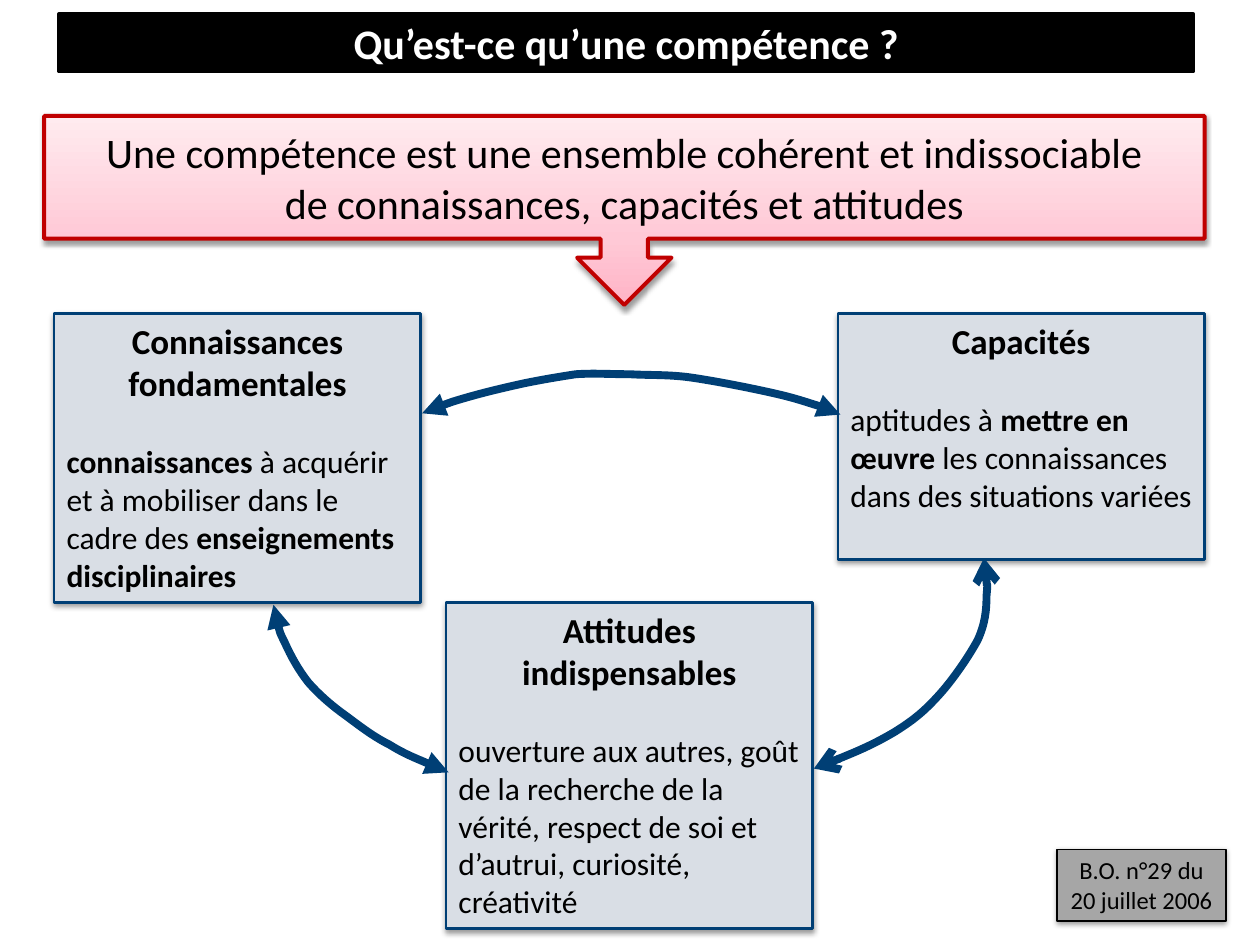
from dataclasses import dataclass

import lxml.etree
import pptx
import pptx.dml.color
import pptx.enum.shapes
import pptx.enum.text
import pptx.oxml.ns
import pptx.util

Inches = pptx.util.Inches
Pt = pptx.util.Pt
RGBColor = pptx.dml.color.RGBColor
Shapes = pptx.enum.shapes.MSO_SHAPE
Align = pptx.enum.text.PP_ALIGN
Anchor = pptx.enum.text.MSO_ANCHOR
qn = pptx.oxml.ns.qn

BLACK = RGBColor(0x00, 0x00, 0x00)
WHITE = RGBColor(0xFF, 0xFF, 0xFF)
NAVY = RGBColor(0x00, 0x3F, 0x75)
PALE_BLUE = RGBColor(0xD9, 0xDE, 0xE5)
RED = RGBColor(0xC0, 0x00, 0x00)
GREY = RGBColor(0xA6, 0xA6, 0xA6)
PINKS = ((0, "FFB3C6"), (35, "FFC9D6"), (100, "FFEBEF"))
FONT = "Calibri"
CARD_WIDTH = 2.91

Point = tuple[float, float]


@dataclass
class Span:
    text: str
    bold: bool = False


@dataclass
class Card:
    left: float
    top: float
    height: float
    heading: str
    body: list[Span]


@dataclass
class Arrow:
    """A chain of cubic curves: a start point, then three points per curve."""
    head: str
    points: list[Point]


CARDS = [
    Card(0.43, 2.49, 2.29, "Connaissances fondamentales", [
        Span("connaissances", True),
        Span(" à acquérir et à mobiliser dans le cadre des "),
        Span("enseignements disciplinaires", True)]),
    Card(6.65, 2.49, 1.95, "Capacités", [
        Span("aptitudes à "),
        Span("mettre en œuvre", True),
        Span(" les connaissances dans des situations variées")]),
    Card(3.54, 4.78, 2.59, "Attitudes indispensables", [
        Span("ouverture aux autres, goût de la recherche de la vérité, "
             "respect de soi et d’autrui, curiosité, créativité")]),
]

ARROWS = [
    Arrow("arrow", [
        (7.81, 4.43), (7.83, 4.52), (7.84, 4.62), (7.83, 4.73),
        (7.83, 4.84), (7.82, 4.95), (7.76, 5.08),
        (7.69, 5.21), (7.56, 5.4), (7.45, 5.52),
        (7.34, 5.64), (7.26, 5.71), (7.1, 5.81),
        (6.93, 5.91), (6.7, 6.01), (6.46, 6.1)]),
    Arrow("triangle", [
        (3.35, 3.28), (3.47, 3.23), (3.58, 3.19), (3.72, 3.15),
        (3.86, 3.11), (4.03, 3.07), (4.17, 3.04),
        (4.32, 3.01), (4.44, 2.99), (4.57, 2.97),
        (4.71, 2.96), (4.84, 2.97), (5, 2.97),
        (5.16, 2.98), (5.32, 2.97), (5.51, 3),
        (5.71, 3.03), (6.01, 3.09), (6.18, 3.13),
        (6.35, 3.17), (6.45, 3.21), (6.53, 3.23),
        (6.61, 3.26), (6.64, 3.27), (6.67, 3.29)]),
    Arrow("triangle", [
        (2.17, 4.8), (2.19, 4.9), (2.21, 5), (2.26, 5.1),
        (2.31, 5.21), (2.37, 5.32), (2.45, 5.42),
        (2.53, 5.51), (2.62, 5.59), (2.73, 5.67),
        (2.84, 5.75), (2.95, 5.84), (3.09, 5.91),
        (3.22, 5.99), (3.56, 6.13), (3.56, 6.13)]),
]


def add_box(page, kind, left: float, top: float, width: float, height: float,
            fill: RGBColor, line: RGBColor, weight: float, anchor=Anchor.TOP):
    box = page.shapes.add_shape(
        kind, Inches(left), Inches(top), Inches(width), Inches(height))
    box.fill.solid()
    box.fill.fore_color.rgb = fill
    box.line.color.rgb = line
    box.line.width = Pt(weight)
    box.shadow.inherit = False
    box.text_frame.word_wrap = True
    box.text_frame.vertical_anchor = anchor
    return box


def add_shadow(box) -> None:
    effects = box._element.spPr.find(qn("a:effectLst"))
    shadow = lxml.etree.SubElement(
        effects, qn("a:outerShdw"), blurRad=str(Pt(3.1)), dist=str(Pt(1.6)),
        dir="5400000", rotWithShape="0")
    color = lxml.etree.SubElement(shadow, qn("a:srgbClr"), val=str(BLACK))
    lxml.etree.SubElement(color, qn("a:alpha"), val="38000")


def fill_with_pinks(box) -> None:
    box.fill.gradient()
    box.fill.gradient_angle = 90
    stops = box._element.spPr.find(qn("a:gradFill")).find(qn("a:gsLst"))
    for stop in list(stops):
        stops.remove(stop)
    for percent, color in PINKS:
        stop = lxml.etree.SubElement(stops, qn("a:gs"), pos=str(percent * 1000))
        lxml.etree.SubElement(stop, qn("a:srgbClr"), val=color)


def write(para, spans: list[Span], size: float, align=Align.CENTER,
          color: RGBColor = BLACK) -> None:
    para.alignment = align
    for span in spans:
        run = para.add_run()
        run.text = span.text
        run.font.name = FONT
        run.font.size = Pt(size)
        run.font.bold = span.bold
        run.font.color.rgb = color


def add_card(page, card: Card) -> None:
    box = add_box(page, Shapes.RECTANGLE, card.left, card.top, CARD_WIDTH,
                  card.height, PALE_BLUE, NAVY, 1.5)
    add_shadow(box)
    write(box.text_frame.paragraphs[0], [Span(card.heading, True)], 20)
    para = box.text_frame.add_paragraph()
    para.space_before = Pt(22)
    write(para, card.body, 18, Align.LEFT)


def bend_segments(curve, points: list[tuple[int, int]]) -> None:
    """Turn each straight segment of the outline into a cubic curve."""
    segments = list(curve._element.iter(qn("a:lnTo")))
    for index, segment in enumerate(segments):
        bend = lxml.etree.Element(qn("a:cubicBezTo"))
        for x, y in points[3 * index + 1:3 * index + 4]:
            lxml.etree.SubElement(bend, qn("a:pt"), x=str(x - curve.left),
                                  y=str(y - curve.top))
        segment.getparent().replace(segment, bend)


def add_arrow(page, arrow: Arrow) -> None:
    points = [(Inches(x), Inches(y)) for x, y in arrow.points]
    builder = page.shapes.build_freeform(*points[0])
    builder.add_line_segments(points[3::3], close=False)
    curve = builder.convert_to_shape()
    bend_segments(curve, points)
    curve.fill.background()
    curve.line.color.rgb = NAVY
    curve.line.width = Pt(4.5)
    curve.shadow.inherit = False
    line = curve._element.spPr.find(qn("a:ln"))
    for end in ("a:headEnd", "a:tailEnd"):
        lxml.etree.SubElement(line, qn(end), type=arrow.head)


def main() -> None:
    deck = pptx.Presentation()
    deck.slide_width, deck.slide_height = Inches(10), Inches(7.5)
    page = deck.slides.add_slide(deck.slide_layouts[6])

    title = add_box(page, Shapes.RECTANGLE, 0.47, 0.11, 9, 0.46,
                    BLACK, BLACK, 2, Anchor.MIDDLE)
    write(title.text_frame.paragraphs[0],
          [Span("Qu’est-ce qu’une compétence ?", True)], 24, color=WHITE)

    callout = add_box(page, Shapes.DOWN_ARROW_CALLOUT, 0.35, 0.92, 9.21, 1.5,
                      WHITE, RED, 2.25, Anchor.MIDDLE)
    fill_with_pinks(callout)
    add_shadow(callout)
    para = callout.text_frame.paragraphs[0]
    write(para, [Span("Une compétence est une ensemble cohérent et indissociable")], 24)
    para.add_line_break()
    write(para, [Span("de connaissances, capacités et attitudes")], 24)

    for card in CARDS:
        add_card(page, card)
    for arrow in ARROWS:
        add_arrow(page, arrow)

    reference = add_box(page, Shapes.RECTANGLE, 8.39, 6.74, 1.34, 0.57,
                        GREY, BLACK, 0.75)
    add_shadow(reference)
    write(reference.text_frame.paragraphs[0],
          [Span("B.O. n°29 du 20 juillet 2006")], 14)

    deck.save("out.pptx")


if __name__ == "__main__":
    main()
